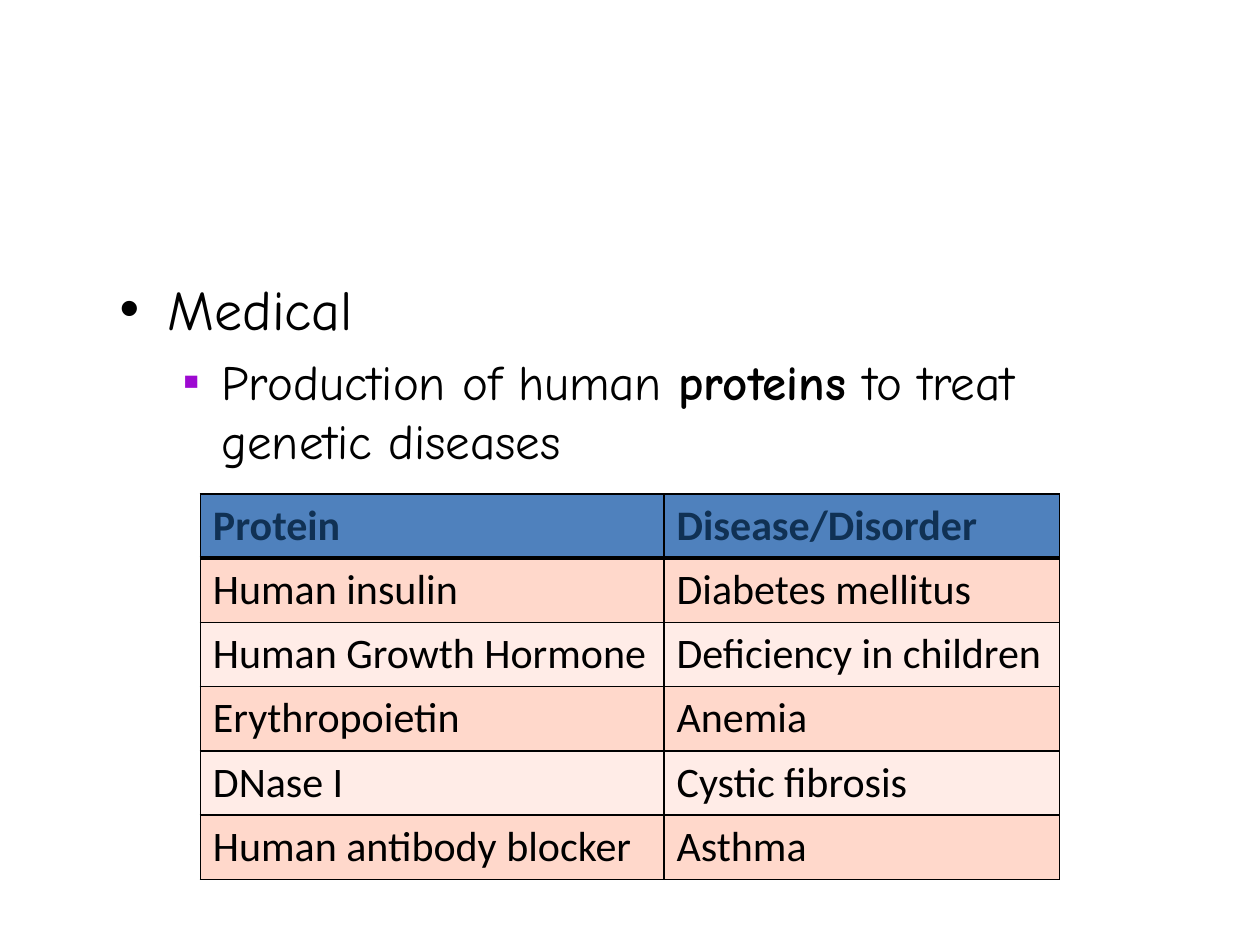
from lxml.etree import SubElement
from pptx import Presentation
from pptx.dml.color import RGBColor
from pptx.enum.text import MSO_ANCHOR
from pptx.oxml.ns import qn
from pptx.util import Inches, Pt

# Content
BULLETS = [
    {"level": 0, "char": "•", "runs": [("Medical", False)]},
    {"level": 1, "char": "▪", "runs": [("Production of human ", False), ("proteins ", True),
                                       ("to treat genetic diseases", False)]},
]
ROWS = [
    ("Protein", "Disease/Disorder"),
    ("Human insulin", "Diabetes mellitus"),
    ("Human Growth Hormone", "Deficiency in children"),
    ("Erythropoietin", "Anemia"),
    ("DNase I", "Cystic fibrosis"),
    ("Human antibody blocker", "Asthma"),
]

# Look
THEME = {
    "text": "000000", "border": "000000", "header": "4F81BD", "header_text": "103154",
    "bands": ("FFD8CB", "FFECE7"),
    "body_font": "Comic Neue", "table_font": "Calibri", "table_size": 24,
    "levels": (
        {"size": 32, "bullet": "000000", "left": 0.38, "hang": 0.38, "before": 0},
        {"size": 28, "bullet": "9D09D1", "left": 0.81, "hang": 0.31, "before": 5.6},
    ),
}
BODY_BOX = (0.85, 2.13, 8.29, 2.11)
TABLE_AT = (1.59, 3.92)
COL_WIDTHS = (3.68, 3.14)
ROW_HEIGHT = 0.51


def style_font(font, name, size, color, bold=False):
    values = {"name": name, "size": Pt(size), "bold": bold}
    for key, value in values.items():
        setattr(font, key, value)
    font.color.rgb = RGBColor.from_string(color)


def set_bullet(p, char, level):
    pPr = p._p.get_or_add_pPr()
    pPr.set("marL", str(Inches(level["left"])))
    pPr.set("indent", str(-Inches(level["hang"])))
    color = SubElement(pPr, qn("a:buClr"))
    SubElement(color, qn("a:srgbClr"), val=level["bullet"])
    SubElement(pPr, qn("a:buFont"), typeface="Arial")
    SubElement(pPr, qn("a:buChar"), char=char)


def set_borders(cell, widths):
    tcPr = cell._tc.get_or_add_tcPr()
    for i, (side, width) in enumerate(widths.items()):
        line = tcPr.makeelement(qn(f"a:ln{side}"), {"w": str(Pt(width))})
        fill = SubElement(line, qn("a:solidFill"))
        SubElement(fill, qn("a:srgbClr"), val=THEME["border"])
        tcPr.insert(i, line)


def add_bullets(s):
    tf = s.shapes.add_textbox(*map(Inches, BODY_BOX)).text_frame
    tf.word_wrap = True
    for i, item in enumerate(BULLETS):
        level = THEME["levels"][item["level"]]
        p = tf.add_paragraph() if i else tf.paragraphs[0]
        p.level = item["level"]
        p.space_before = Pt(level["before"])
        set_bullet(p, item["char"], level)
        for text, bold in item["runs"]:
            r = p.add_run()
            r.text = text
            style_font(r.font, THEME["body_font"], level["size"], THEME["text"], bold)


def add_protein_table(s):
    size = (sum(COL_WIDTHS), ROW_HEIGHT * len(ROWS))
    table = s.shapes.add_table(len(ROWS), len(COL_WIDTHS),
                               *map(Inches, TABLE_AT + size)).table
    for column, width in zip(table.columns, COL_WIDTHS):
        column.width = Inches(width)
    for i, row in enumerate(ROWS):
        table.rows[i].height = Inches(ROW_HEIGHT)
        header = i == 0
        fill = THEME["header"] if header else THEME["bands"][(i - 1) % 2]
        color = THEME["header_text"] if header else THEME["text"]
        borders = {"L": 1, "R": 1, "T": 3 if i == 1 else 1, "B": 3 if header else 1}
        for j, text in enumerate(row):
            cell = table.cell(i, j)
            cell.vertical_anchor = MSO_ANCHOR.TOP
            cell.fill.solid()
            cell.fill.fore_color.rgb = RGBColor.from_string(fill)
            r = cell.text_frame.paragraphs[0].add_run()
            r.text = text
            style_font(r.font, THEME["table_font"], THEME["table_size"], color, header)
            set_borders(cell, borders)


def main():
    prs = Presentation()
    prs.slide_width, prs.slide_height = Inches(10), Inches(7.5)
    s = prs.slides.add_slide(prs.slide_layouts[6])
    add_bullets(s)
    add_protein_table(s)
    prs.save("out.pptx")


if __name__ == "__main__":
    main()
